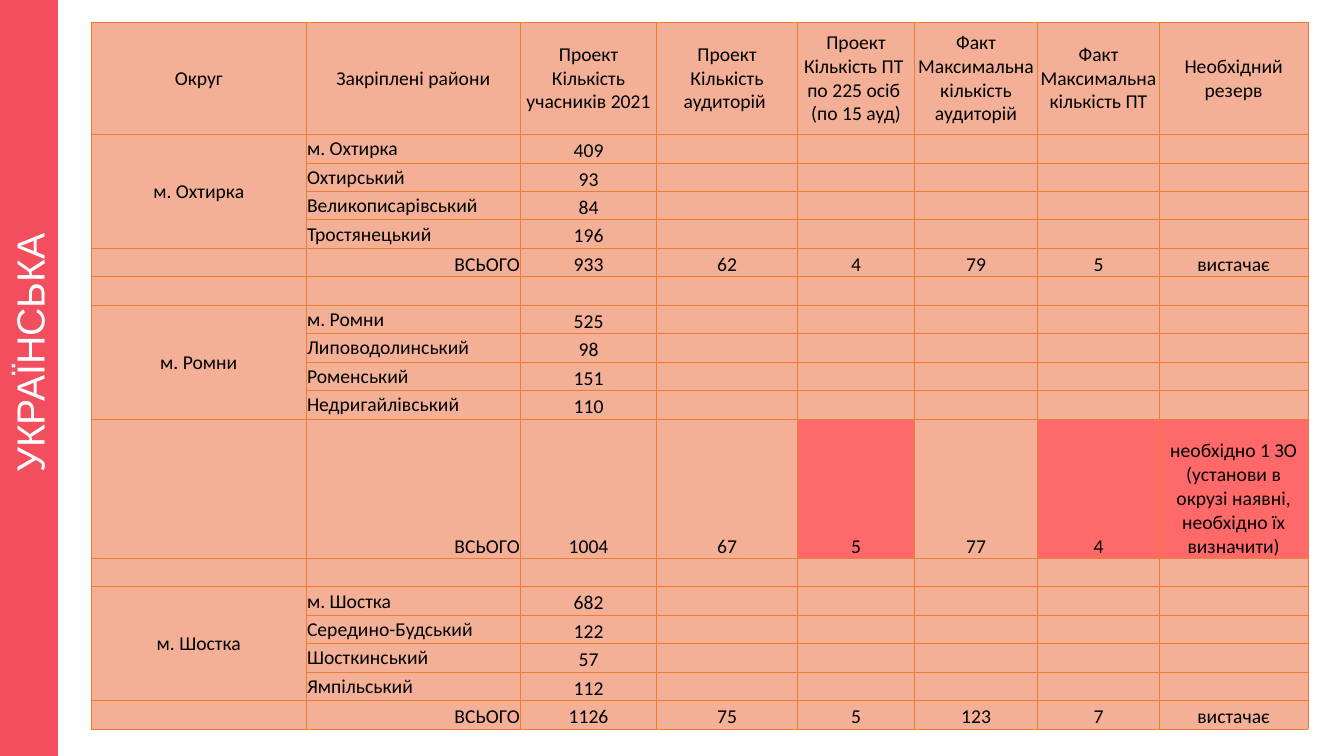
from lxml.etree import SubElement
from pptx import Presentation
from pptx.dml.color import RGBColor
from pptx.enum.text import MSO_ANCHOR as Anchor, MSO_AUTO_SIZE as AutoSize, PP_ALIGN as Align
from pptx.oxml.ns import qn
from pptx.util import Pt

COLORS = {
    "banner": "F24E5E",
    "banner_text": "FFFFFF",
    "cell": "F4B096",
    "shortage": "FF6969",
    "border": "ED7D31",
    "text": "000000",
}
HEADERS = [
    "Округ",
    "Закріплені райони",
    "Проект Кількість учасників 2021",
    "Проект\nКількість аудиторій ",
    "Проект\nКількість ПТ \nпо 225 осіб \n(по 15 ауд)",
    "Факт\nМаксимальна кількість аудиторій",
    "Факт\nМаксимальна кількість ПТ",
    "Необхідний резерв",
]
RESERVE_NEEDED = "необхідно 1 ЗО (установи в окрузі наявні, необхідно їх визначити)"
DISTRICTS = [
    ("м. Охтирка",
     [("м. Охтирка", 409), ("Охтирський", 93), ("Великописарівський", 84), ("Тростянецький", 196)],
     [933, 62, 4, 79, 5, "вистачає"]),
    ("м. Ромни",
     [("м. Ромни", 525), ("Липоводолинський", 98), ("Роменський", 151), ("Недригайлівський", 110)],
     [1004, 67, 5, 77, 4, RESERVE_NEEDED]),
    ("м. Шостка",
     [("м. Шостка", 682), ("Середино-Будський", 122), ("Шосткинський", 57), ("Ямпільський", 112)],
     [1126, 75, 5, 123, 7, "вистачає"]),
]
COLUMN_WIDTHS = [153.4, 153.2, 97.1, 100.7, 83.6, 87.9, 87.1, 106]
HEADER_HEIGHT, ROW_HEIGHT, SHORTAGE_HEIGHT = 80, 20.34, 99.5
SHORTAGE_COLUMNS = (4, 6, 7)


def rgb(name):
    return RGBColor.from_string(COLORS[name])


def add_banner(slide, subject):
    banner = slide.shapes.title
    banner.left, banner.top, banner.width, banner.height = Pt(-249.3), Pt(249.3), Pt(540), Pt(41.2)
    banner.rotation = 270
    banner.fill.solid()
    banner.fill.fore_color.rgb = rgb("banner")
    frame = banner.text_frame
    frame.text = subject
    frame.auto_size = AutoSize.NONE
    frame.vertical_anchor = Anchor.MIDDLE
    paragraph = frame.paragraphs[0]
    paragraph.alignment = Align.CENTER
    properties = paragraph._p.get_or_add_pPr()
    properties.set("marL", str(Pt(35.4)))
    properties.set("indent", "0")
    font = paragraph.runs[0].font
    font.name, font.size = "Arial", Pt(28)
    font.color.rgb = rgb("banner_text")


def draw_borders(cell):
    properties = cell._tc.get_or_add_tcPr()
    for side in ("a:lnL", "a:lnR", "a:lnT", "a:lnB"):
        line = SubElement(properties, qn(side), w=str(Pt(0.5)))
        fill = SubElement(line, qn("a:solidFill"))
        SubElement(fill, qn("a:srgbClr"), val=COLORS["border"])


def style_cell(cell, text, fill="cell", align=Align.CENTER, anchor=Anchor.MIDDLE, margin=0.6):
    draw_borders(cell)
    cell.fill.solid()
    cell.fill.fore_color.rgb = rgb(fill)
    cell.margin_left = cell.margin_right = cell.margin_top = Pt(margin)
    cell.margin_bottom = 0
    cell.vertical_anchor = anchor
    cell.text_frame.text = str(text)
    for paragraph in cell.text_frame.paragraphs:
        paragraph.alignment = align
        for run in paragraph.runs:
            run.font.name, run.font.size = "Calibri", Pt(14)
            run.font.color.rgb = rgb("text")
        if not paragraph.runs:
            SubElement(paragraph._p, qn("a:endParaRPr"), sz="1400")


def table_rows():
    rows = [HEADERS]
    for index, (town, areas, totals) in enumerate(DISTRICTS):
        if index:
            rows.append([""] * len(HEADERS))
        for position, (area, count) in enumerate(areas):
            rows.append(["" if position else town, area, count] + [""] * 5)
        rows.append(["", "ВСЬОГО"] + totals)
    return rows


def cell_format(row, column, values):
    if row == 0:
        return {"margin": 0.6 if column < 2 else 0}
    is_total = values[1] == "ВСЬОГО"
    options = {}
    if column == 1:
        options["align"] = Align.RIGHT if is_total else Align.LEFT
    if column > 1 or is_total:
        options["anchor"] = Anchor.BOTTOM
    if values[-1] == RESERVE_NEEDED and column in SHORTAGE_COLUMNS:
        options["fill"] = "shortage"
    return options


def add_district_table(slide):
    rows = table_rows()
    heights = [SHORTAGE_HEIGHT if values[-1] == RESERVE_NEEDED else ROW_HEIGHT for values in rows]
    heights[0] = HEADER_HEIGHT
    table = slide.shapes.add_table(
        len(rows), len(HEADERS), Pt(65.3), Pt(16), Pt(sum(COLUMN_WIDTHS)), Pt(sum(heights))
    ).table
    table.first_row = table.horz_banding = False
    for column, width in zip(table.columns, COLUMN_WIDTHS):
        column.width = Pt(width)
    for row, (values, height) in enumerate(zip(rows, heights)):
        table.rows[row].height = Pt(height)
        for column, text in enumerate(values):
            style_cell(table.cell(row, column), text, **cell_format(row, column, values))
    first = 1
    for town, areas, totals in DISTRICTS:
        table.cell(first, 0).merge(table.cell(first + len(areas) - 1, 0))
        first += len(areas) + 2


def main():
    deck = Presentation()
    deck.slide_width, deck.slide_height = Pt(960), Pt(540)
    slide = deck.slides.add_slide(deck.slide_layouts[5])
    add_banner(slide, "УКРАЇНСЬКА")
    add_district_table(slide)
    deck.save("out.pptx")


if __name__ == "__main__":
    main()
